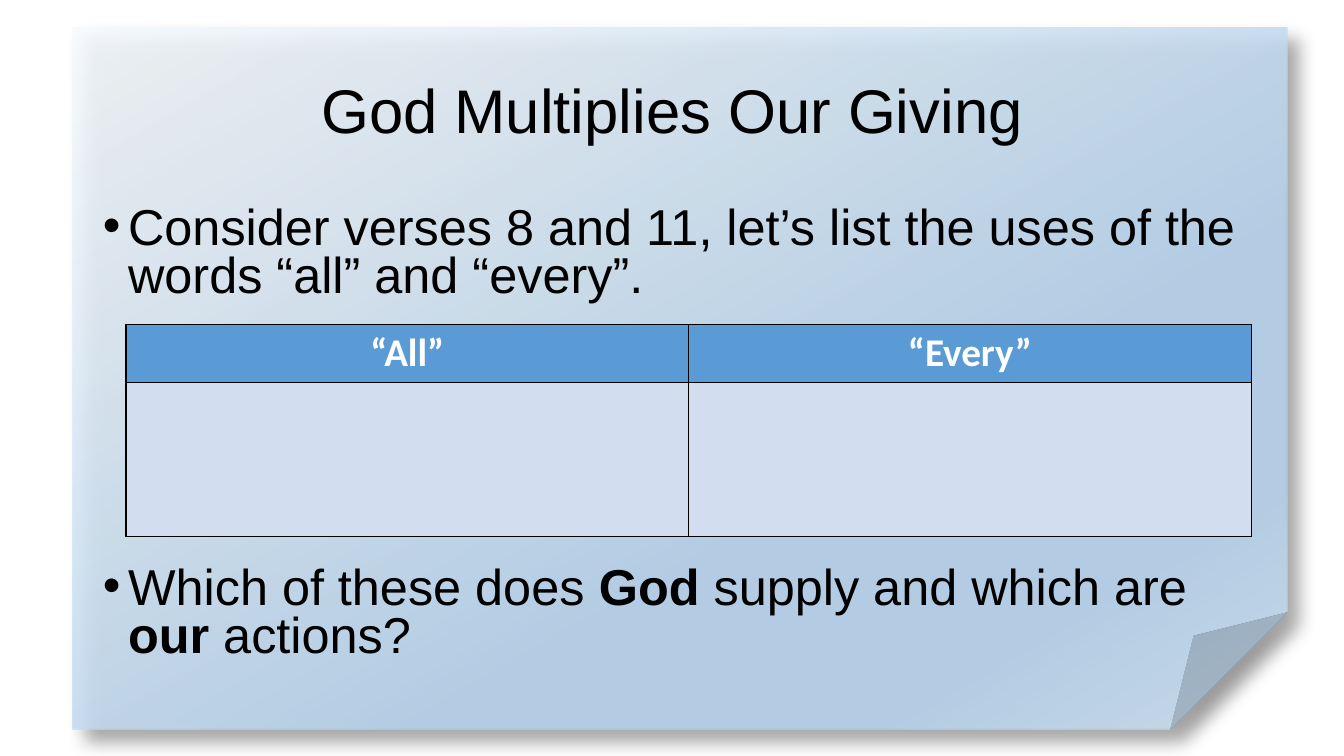
from dataclasses import dataclass

from pptx import Presentation
from pptx.dml.color import RGBColor
from pptx.enum.shapes import MSO_SHAPE
from pptx.enum.text import MSO_ANCHOR, MSO_AUTO_SIZE, PP_ALIGN
from pptx.oxml import parse_xml
from pptx.oxml.ns import nsdecls
from pptx.util import Inches, Pt


@dataclass(frozen=True)
class Theme:
    text: str = "000000"
    white: str = "FFFFFF"
    header: str = "5B9BD5"
    cell: str = "D2DEEF"
    border: str = "000000"
    shadow: str = "000000"
    paper: tuple = ((0, "F7FAFD"), (64, "B5D2EC"), (83, "B5D2EC"), (100, "CEE1F2"))
    paper_alpha: int = 87
    font: str = "Arial"
    table_font: str = "Calibri"
    title_size: int = 44
    body_size: int = 36
    table_size: int = 28


class SlideBuilder:
    def __init__(self, slide, theme):
        self.slide = slide
        self.theme = theme

    def place(self, sp, left, top, width, height):
        sp.left, sp.top = Inches(left), Inches(top)
        sp.width, sp.height = Inches(width), Inches(height)

    def run(self, p, text, size, bold=False, font=None, color=None):
        r = p.add_run()
        r.text = text
        r.font.name = font or self.theme.font
        r.font.size = Pt(size)
        r.font.bold = bold
        r.font.color.rgb = RGBColor.from_string(color or self.theme.text)

    def paper(self, left, top, width, height):
        t = self.theme
        sp = self.slide.shapes.add_shape(
            MSO_SHAPE.FOLDED_CORNER,
            Inches(left), Inches(top), Inches(width), Inches(height))
        sp.line.fill.background()
        stops = "".join(
            f'<a:gs pos="{pos * 1000}"><a:srgbClr val="{color}">'
            f'<a:alpha val="{t.paper_alpha * 1000}"/></a:srgbClr></a:gs>'
            for pos, color in t.paper)
        gradient = parse_xml(
            f'<a:gradFill {nsdecls("a")} rotWithShape="1"><a:gsLst>{stops}</a:gsLst>'
            '<a:lin ang="3600000" scaled="0"/></a:gradFill>')
        effects = parse_xml(
            f'<a:effectLst {nsdecls("a")}><a:outerShdw blurRad="{Pt(13)}" '
            f'dist="{Pt(13)}" dir="2700000" algn="tl" rotWithShape="0">'
            f'<a:srgbClr val="{t.shadow}"><a:alpha val="40000"/></a:srgbClr>'
            '</a:outerShdw></a:effectLst>')
        spPr = sp._element.spPr
        spPr.insert(2, gradient)
        spPr.append(effects)
        self.slide.shapes._spTree.insert(2, sp._element)

    def title(self, text, *box):
        sp = self.slide.shapes.title
        self.place(sp, *box)
        tf = sp.text_frame
        tf.auto_size = MSO_AUTO_SIZE.NONE
        tf.vertical_anchor = MSO_ANCHOR.MIDDLE
        p = tf.paragraphs[0]
        p.alignment = PP_ALIGN.CENTER
        p.line_spacing = 0.9
        self.run(p, text, self.theme.title_size)

    def bullets(self, items, gap, *box):
        sp = self.slide.placeholders[1]
        self.place(sp, *box)
        tf = sp.text_frame
        tf.auto_size = MSO_AUTO_SIZE.NONE
        tf.vertical_anchor = MSO_ANCHOR.TOP
        for i, runs in enumerate(items):
            p = tf.add_paragraph() if i else tf.paragraphs[0]
            pPr = p._p.get_or_add_pPr()
            pPr.set("marL", str(Inches(0.25)))
            pPr.set("indent", str(-Inches(0.25)))
            pPr.append(parse_xml(f'<a:buFont {nsdecls("a")} typeface="Arial"/>'))
            pPr.append(parse_xml(f'<a:buChar {nsdecls("a")} char="•"/>'))
            p.line_spacing = 0.8
            p.space_before = Pt(gap if i else 0)
            for text, bold in runs:
                self.run(p, text, self.theme.body_size, bold)

    def table(self, headers, left, top, col_width, row_heights):
        t = self.theme
        table = self.slide.shapes.add_table(
            len(row_heights), len(headers), Inches(left), Inches(top),
            Inches(col_width * len(headers)), Inches(sum(row_heights))).table
        for col in table.columns:
            col.width = Inches(col_width)
        for row, height in zip(table.rows, row_heights):
            row.height = Inches(height)
        for cell in table.iter_cells():
            self.borders(cell)
            cell.fill.solid()
            cell.fill.fore_color.rgb = RGBColor.from_string(t.cell)
        for cell, text in zip(table.rows[0].cells, headers):
            cell.fill.fore_color.rgb = RGBColor.from_string(t.header)
            p = cell.text_frame.paragraphs[0]
            p.alignment = PP_ALIGN.CENTER
            self.run(p, text, t.table_size, True, t.table_font, t.white)

    def borders(self, cell):
        tcPr = cell._tc.get_or_add_tcPr()
        for side in ("lnL", "lnR", "lnT", "lnB"):
            tcPr.append(parse_xml(
                f'<a:{side} {nsdecls("a")} w="{Pt(1)}"><a:solidFill>'
                f'<a:srgbClr val="{self.theme.border}"/></a:solidFill></a:{side}>'))


def main():
    prs = Presentation()
    prs.slide_width, prs.slide_height = Inches(13.33), Inches(7.5)
    s = SlideBuilder(prs.slides.add_slide(prs.slide_layouts[1]), Theme())
    s.paper(0.72, 0.27, 12.05, 6.97)
    s.title("God Multiplies Our Giving", 0.92, 0.4, 11.5, 1.45)
    s.bullets(
        [
            [("Consider verses 8 and 11, let’s list the uses of the words “all” and “every”.", False)],
            [
                ("Which of these does ", False),
                ("God", True),
                (" supply and which are ", False),
                ("our", True),
                (" actions?", False),
            ],
        ],
        188, 0.92, 2, 11.5, 4.76)
    s.table(["“All”", "“Every”"], 1.25, 3.22, 5.58, [0.57, 1.53])
    prs.save("out.pptx")


if __name__ == "__main__":
    main()
